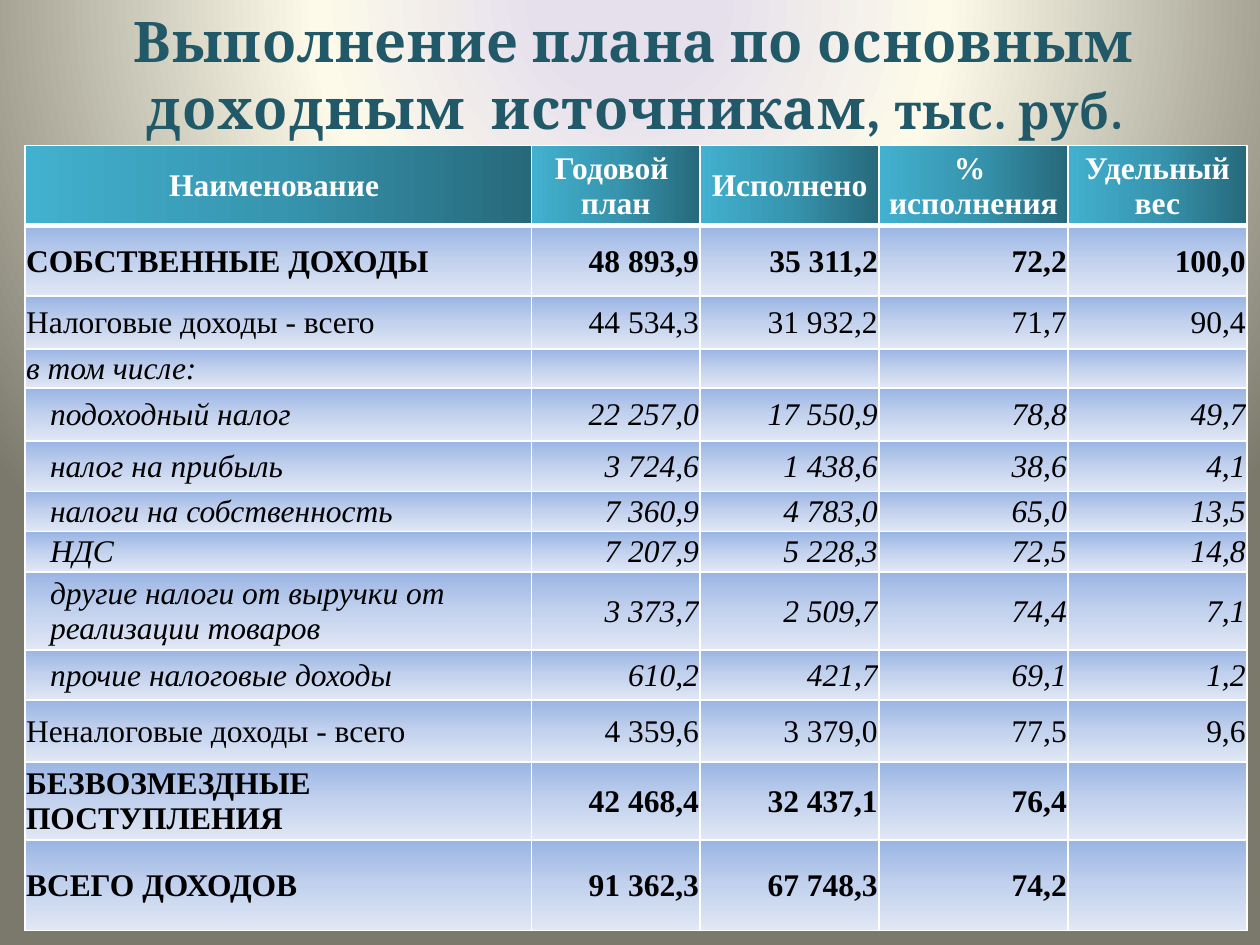
"""Build a slide with a table of budget revenue plan fulfilment."""
from lxml.etree import SubElement
from pptx import Presentation
from pptx.dml.color import RGBColor
from pptx.enum.text import MSO_ANCHOR, PP_ALIGN
from pptx.oxml import parse_xml
from pptx.oxml.ns import qn
from pptx.util import Pt

COLORS = {"title": "215968", "white": "FFFFFF", "black": "000000"}
BACKGROUND_STOPS = [(11, "E6E0EC"), (40, "FDFAEA"), (100, "7B796B")]
HEADER_STOPS = [(0, "27697B"), (50, "3795AF"), (100, "42B1CF")]
BODY_STOPS = [(0, "9AB5E4"), (50, "C2D1ED"), (100, "E1E8F5")]
BODY_FONT = "Times New Roman"

TITLE_RUNS = [("Выполнение плана по основным доходным  источникам, ", 32), ("тыс. руб.", 28)]
HEADERS = ["Наименование ", "Годовой \nплан", "Исполнено", "% \nисполнения", "Удельный вес"]
COLUMN_WIDTHS = [289.4, 96.5, 102.2, 108, 102.2]
HEADER_HEIGHT = 46
ROWS = [
    (40.3, "total", ["СОБСТВЕННЫЕ ДОХОДЫ", "48 893,9", "35 311,2", "72,2", "100,0"]),
    (30.2, "group", ["Налоговые доходы - всего", "44 534,3", "31 932,2", "71,7", "90,4"]),
    (22.3, "note", ["в том числе:", "", "", "", ""]),
    (30.2, "item", ["подоходный налог", "22 257,0", "17 550,9", "78,8", "49,7"]),
    (28.8, "item", ["налог на прибыль", "3 724,6", "1 438,6", "38,6", "4,1"]),
    (23, "item", ["налоги на собственность", "7 360,9", "4 783,0", "65,0", "13,5"]),
    (23, "item", ["НДС", "7 207,9", "5 228,3", "72,5", "14,8"]),
    (44.6, "item", ["другие налоги от выручки от реализации товаров",
                    "3 373,7", "2 509,7", "74,4", "7,1"]),
    (28.8, "item", ["прочие налоговые доходы", "610,2", "421,7", "69,1", "1,2"]),
    (35.3, "group", ["Неналоговые доходы - всего", "4 359,6", "3 379,0", "77,5", "9,6"]),
    (44.6, "total", ["БЕЗВОЗМЕЗДНЫЕ ПОСТУПЛЕНИЯ", "42 468,4", "32 437,1", "76,4", ""]),
    (51.8, "total", ["ВСЕГО ДОХОДОВ", "91 362,3", "67 748,3", "74,2", ""]),
]


def add_gradient(parent, stops, angle=None):
    fill = SubElement(parent, qn("a:gradFill"), rotWithShape="1")
    stop_list = SubElement(fill, qn("a:gsLst"))
    for position, color in stops:
        stop = SubElement(stop_list, qn("a:gs"), pos=str(position * 1000))
        SubElement(stop, qn("a:srgbClr"), val=color)
    if angle is None:
        circle = SubElement(fill, qn("a:path"), path="circle")
        SubElement(circle, qn("a:fillToRect"), l="50000", t="-80000", r="50000", b="180000")
    else:
        SubElement(fill, qn("a:lin"), ang=str(angle * 60000), scaled="0")


def set_background(slide):
    namespaces = " ".join(
        f'xmlns:{prefix}="http://schemas.openxmlformats.org/{kind}/2006/main"'
        for prefix, kind in (("a", "drawingml"), ("p", "presentationml")))
    background = parse_xml(f"<p:bg {namespaces}><p:bgPr/></p:bg>")
    add_gradient(background[0], BACKGROUND_STOPS)
    SubElement(background[0], qn("a:effectLst"))
    slide.shapes._spTree.addprevious(background)


def add_title(slide):
    frame = slide.shapes.add_textbox(Pt(16.6), Pt(0), Pt(692), Pt(84.2)).text_frame
    frame.word_wrap = True
    frame.vertical_anchor = MSO_ANCHOR.MIDDLE
    paragraph = frame.paragraphs[0]
    paragraph.alignment = PP_ALIGN.CENTER
    paragraph.font.name = "Cambria"
    paragraph.font.bold = True
    paragraph.font.color.rgb = RGBColor.from_string(COLORS["title"])
    for text, size in TITLE_RUNS:
        run = paragraph.add_run()
        run.text = text
        run.font.size = Pt(size)
        run._r.get_or_add_rPr().set("spc", "50")


def format_cell(cell, text, style, column):
    header = style == "header"
    cell.text = text
    cell.vertical_anchor = MSO_ANCHOR.MIDDLE
    cell.margin_left = Pt(14.4 if style == "item" and column == 0 else 0.7)
    cell.margin_right = cell.margin_top = Pt(0.7)
    cell.margin_bottom = Pt(0)
    for paragraph in cell.text_frame.paragraphs:
        if header:
            paragraph.alignment = PP_ALIGN.CENTER
        else:
            paragraph.alignment = PP_ALIGN.RIGHT if column else PP_ALIGN.LEFT
        font = paragraph.font
        font.name = BODY_FONT
        font.size = Pt(18)
        font.bold = style in ("header", "total")
        font.italic = style in ("note", "item")
        font.color.rgb = RGBColor.from_string(COLORS["white" if header else "black"])
    properties = cell._tc.get_or_add_tcPr()
    header_edge = {"header": "lnB", "first": "lnT"}.get(style)
    for side in ("lnL", "lnR", "lnT", "lnB"):
        width = Pt(3 if side == header_edge else 1)
        line = SubElement(properties, qn(f"a:{side}"), w=str(width))
        SubElement(SubElement(line, qn("a:solidFill")), qn("a:srgbClr"), val=COLORS["white"])
    add_gradient(properties, HEADER_STOPS if header else BODY_STOPS, 180 if header else 90)


def add_revenue_table(slide):
    rows = [(HEADER_HEIGHT, "header", HEADERS)] + ROWS
    height = sum(row[0] for row in rows)
    table = slide.shapes.add_table(
        len(rows), len(HEADERS), Pt(14.2), Pt(83), Pt(sum(COLUMN_WIDTHS)), Pt(height)).table
    table.first_row = table.horz_banding = False
    for column, width in zip(table.columns, COLUMN_WIDTHS):
        column.width = Pt(width)
    for row, (row_height, style, texts) in zip(table.rows, rows):
        row.height = Pt(row_height)
        for column, (cell, text) in enumerate(zip(row.cells, texts)):
            format_cell(cell, text, style, column)
    for cell in table.rows[1].cells:
        cell._tc.tcPr.find(qn("a:lnT")).set("w", str(Pt(3)))


def main():
    presentation = Presentation()
    presentation.slide_width, presentation.slide_height = Pt(720), Pt(540)
    slide = presentation.slides.add_slide(presentation.slide_layouts[6])
    set_background(slide)
    add_title(slide)
    add_revenue_table(slide)
    presentation.save("out.pptx")


if __name__ == "__main__":
    main()
